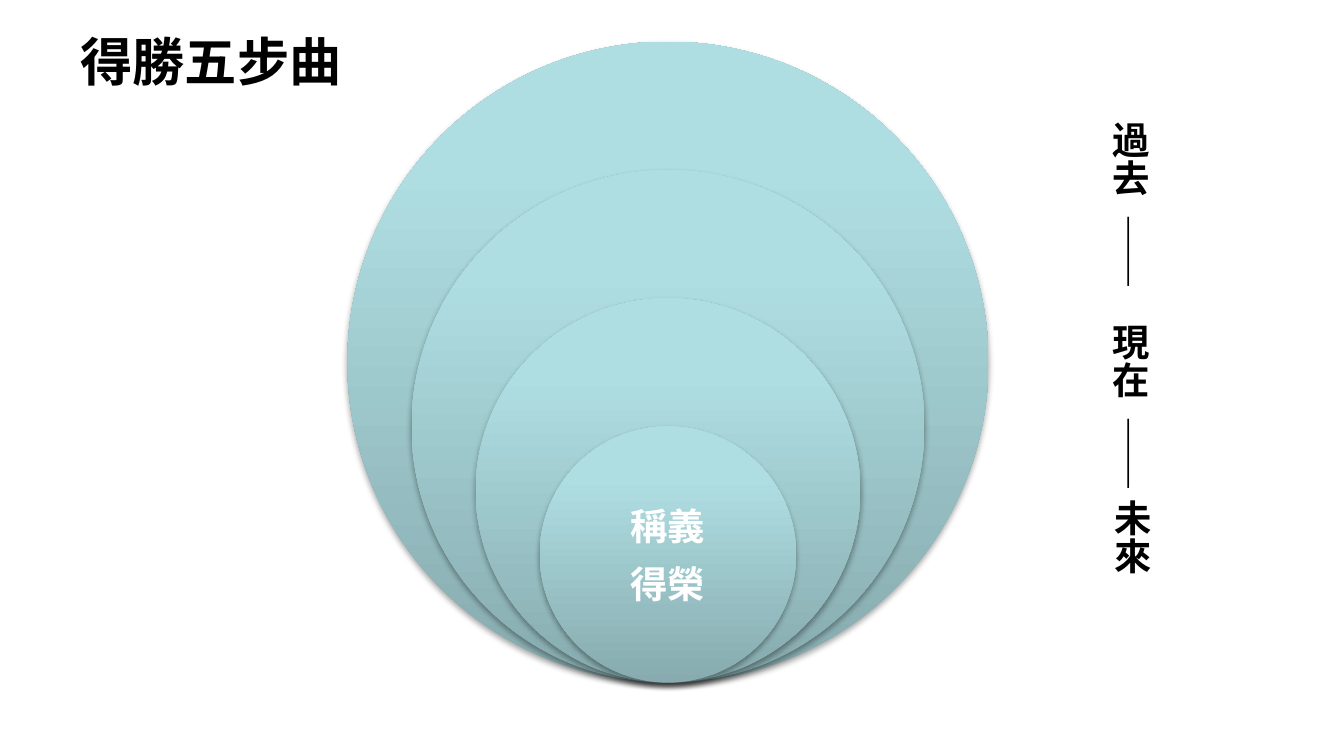
import copy

import pptx
import pptx.dml.color
import pptx.enum.shapes
import pptx.enum.text
import pptx.oxml
import pptx.oxml.ns
import pptx.util
from pptx.util import Inches

FONT = "Noto Sans CJK TC"
BLACK = pptx.dml.color.RGBColor(0x00, 0x00, 0x00)
WHITE = pptx.dml.color.RGBColor(0xFF, 0xFF, 0xFF)
TEAL_DARK = pptx.dml.color.RGBColor(0x87, 0xAB, 0xAE)
TEAL = pptx.dml.color.RGBColor(0xAF, 0xDE, 0xE2)
TEAL_LIGHT = pptx.dml.color.RGBColor(0xAF, 0xE0, 0xE4)
GRADIENT = [(0, TEAL_DARK), (0.8, TEAL), (1, TEAL_LIGHT)]

SLIDE_WIDTH = 10
CENTER_X = 4.97
BOTTOM = 5.08
OUTER_DIAMETER = 4.77
STEPS = 5
SHADOW = (
    f'<a:outerShdw {pptx.oxml.ns.nsdecls("a")} blurRad="39370" dist="22860" '
    'dir="5400000" rotWithShape="0"><a:srgbClr val="000000">'
    '<a:alpha val="35000"/></a:srgbClr></a:outerShdw>'
)


def format_runs(paragraph, size, color):
    for run in paragraph.runs:
        run.font.size = pptx.util.Pt(size)
        run.font.bold = True
        run.font.name = FONT
        run.font.color.rgb = color
        east_asian = run.font._element.makeelement(pptx.oxml.ns.qn("a:ea"), {"typeface": FONT})
        run.font._element.append(east_asian)


def set_title(slide, text):
    title = slide.shapes.title
    title.left, title.top = Inches(0.5), Inches(0.17)
    title.width, title.height = Inches(2.2), Inches(0.57)
    frame = title.text_frame
    frame.text = text
    frame.word_wrap = False
    frame.auto_size = pptx.enum.text.MSO_AUTO_SIZE.SHAPE_TO_FIT_TEXT
    frame.vertical_anchor = pptx.enum.text.MSO_ANCHOR.TOP
    frame.paragraphs[0].alignment = pptx.enum.text.PP_ALIGN.LEFT
    format_runs(frame.paragraphs[0], 28, BLACK)


def add_circle(slide, diameter):
    circle = slide.shapes.add_shape(
        pptx.enum.shapes.MSO_SHAPE.OVAL,
        Inches(CENTER_X - diameter / 2), Inches(BOTTOM - diameter),
        Inches(diameter), Inches(diameter),
    )
    circle.line.fill.background()
    circle.fill.gradient()
    circle.fill.gradient_angle = 90
    properties = circle._element.spPr
    stop_list = properties.find(".//" + pptx.oxml.ns.qn("a:gsLst"))
    stop_list.append(copy.deepcopy(stop_list[-1]))
    for stop, (position, color) in zip(circle.fill.gradient_stops, GRADIENT):
        stop.position = position
        stop.color.rgb = color
    circle.shadow.inherit = False
    effects = properties.find(pptx.oxml.ns.qn("a:effectLst"))
    effects.append(pptx.oxml.parse_xml(SHADOW))
    return circle


def label_circle(circle, text):
    frame = circle.text_frame
    frame.text = text
    frame.vertical_anchor = pptx.enum.text.MSO_ANCHOR.MIDDLE
    frame.margin_left = frame.margin_right = Inches(0.16)
    frame.margin_top = frame.margin_bottom = Inches(0.16)
    for paragraph in frame.paragraphs:
        paragraph.alignment = pptx.enum.text.PP_ALIGN.CENTER
        paragraph.space_after = pptx.util.Pt(7)
        format_runs(paragraph, 20, WHITE)


def add_timeline(slide, parts):
    timeline = slide.shapes.add_textbox(Inches(7.75), Inches(0.81), Inches(0.87), Inches(3.59))
    frame = timeline.text_frame
    frame.word_wrap = False
    frame.auto_size = pptx.enum.text.MSO_AUTO_SIZE.SHAPE_TO_FIT_TEXT
    frame._txBody.bodyPr.set("vert", "eaVert")
    paragraph = frame.paragraphs[0]
    for text, spacing in parts:
        run = paragraph.add_run()
        run.text = text
        if spacing:
            run.font._element.set("spc", str(spacing * 100))
    format_runs(paragraph, 20, BLACK)


def main():
    presentation = pptx.Presentation()
    presentation.slide_width = Inches(SLIDE_WIDTH)
    presentation.slide_height = Inches(SLIDE_WIDTH * 9 / 16)
    slide = presentation.slides.add_slide(presentation.slide_layouts[5])
    set_title(slide, "得勝五步曲")
    for step in range(STEPS, 1, -1):
        circle = add_circle(slide, OUTER_DIAMETER * step / STEPS)
    label_circle(circle, "稱義\n得榮")
    add_timeline(slide, [
        ("過去", 0), (" ", 5), ("——", 0), (" ", 14),
        ("現在", 0), (" ", 5), ("—— 未來", 0),
    ])
    presentation.save("out.pptx")


if __name__ == "__main__":
    main()
